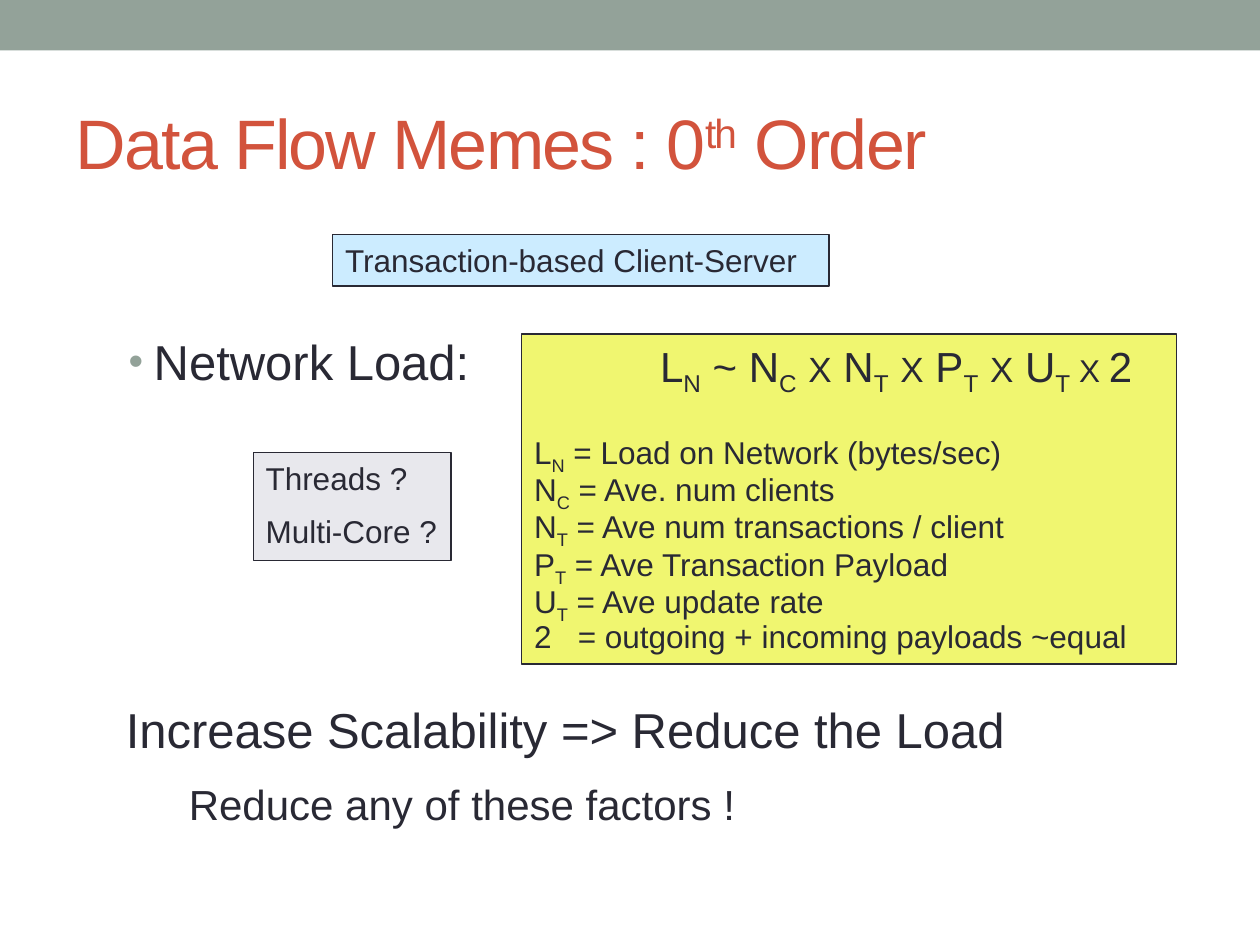
"""Build a slide on the network load of transaction-based client-server systems."""
from dataclasses import dataclass

from lxml import etree
from pptx import Presentation
from pptx.dml.color import RGBColor
from pptx.enum.shapes import MSO_SHAPE
from pptx.enum.text import MSO_ANCHOR, PP_ALIGN
from pptx.oxml.ns import qn
from pptx.util import Inches, Pt

RECT = MSO_SHAPE.RECTANGLE
TOP, MIDDLE = MSO_ANCHOR.TOP, MSO_ANCHOR.MIDDLE
LEFT = PP_ALIGN.LEFT
COLUMNS, ROWS = 100, 75
SUB, SUPER = -25, 30


@dataclass(frozen=True)
class Theme:
    """Colours, font and type sizes of the slide."""
    font: str = "Arial"
    ink: str = "292934"
    accent: str = "D2533C"
    sage: str = "93A299"
    yellow: str = "F0F670"
    grey: str = "E8E8ED"
    blue: str = "CCECFF"
    title: int = 40
    lead: int = 28
    formula: int = 24
    times: int = 20
    note: int = 18


THEME = Theme()


def rgb(value):
    """Return a colour from its hex code."""
    return RGBColor.from_string(value)


def grid(prs, col, row, cols, rows):
    """Return left, top, width and height for a span of the slide grid."""
    w, h = prs.slide_width / COLUMNS, prs.slide_height / ROWS
    return int(col * w), int(row * h), int(cols * w), int(rows * h)


def place(sp, box):
    """Move a placeholder to a box."""
    sp.left, sp.top, sp.width, sp.height = box


def add_run(p, text, size, shift=0, color=THEME.ink, spacing=0):
    """Add one formatted run, raised or lowered by a percentage."""
    r = p.add_run()
    r.text = text
    r.font.name, r.font.size = THEME.font, Pt(size)
    r.font.color.rgb = rgb(color)
    if shift:
        r.font._element.set("baseline", str(shift * 1000))
    if spacing:
        r.font._element.set("spc", str(spacing * 100))


def add_paragraph(tf, runs, before=0, line=None, indent=0, hanging=0):
    """Fill the first empty paragraph or add one, from (text, size, shift) runs."""
    p = tf.paragraphs[0] if not tf.text else tf.add_paragraph()
    p.alignment, p.space_before = LEFT, Pt(before)
    if line:
        p.line_spacing = line
    pPr = p._p.get_or_add_pPr()
    pPr.set("marL", str(Inches(indent)))
    pPr.set("indent", str(-Inches(hanging)))
    for run in runs:
        add_run(p, *run)
    return p


def add_property(parent, tag, **attributes):
    """Append a drawing element with its attributes."""
    child = etree.SubElement(parent, qn(tag))
    for name, value in attributes.items():
        child.set(name, value)
    return child


def add_bullet(p):
    """Give a paragraph a sage dot."""
    pPr = p._p.get_or_add_pPr()
    add_property(add_property(pPr, "a:buClr"), "a:srgbClr", val=THEME.sage)
    add_property(pPr, "a:buSzPct", val="85000")
    add_property(pPr, "a:buFont", typeface=THEME.font)
    add_property(pPr, "a:buChar", char="•")


def add_box(s, box, fill, outlined=True):
    """Add a filled rectangle and return its text frame."""
    sp = s.shapes.add_shape(RECT, *box)
    sp.shadow.inherit = False
    sp.fill.solid()
    sp.fill.fore_color.rgb = rgb(fill)
    if outlined:
        sp.line.color.rgb = rgb(THEME.ink)
        sp.line.width = Pt(0.75)
    else:
        sp.line.fill.background()
    tf = sp.text_frame
    tf.word_wrap, tf.vertical_anchor = True, TOP
    return tf


def add_title(s, box):
    """Fill the title placeholder."""
    place(s.shapes.title, box)
    tf = s.shapes.title.text_frame
    tf.vertical_anchor = MIDDLE
    add_paragraph(tf, [(text, THEME.title, shift, THEME.accent, -1) for text, shift in
                       (("Data Flow Memes : 0", 0), ("th", SUPER), (" Order", 0))])


def add_topic(s, box):
    """Fill the body placeholder with the bulleted topic."""
    body = s.placeholders[1]
    place(body, box)
    runs = [("Network Load:", THEME.lead)]
    add_bullet(add_paragraph(body.text_frame, runs, indent=0.2, hanging=0.2))


def add_note_box(s, box, fill, lines):
    """Add a box of plain note lines."""
    tf = add_box(s, box, fill)
    for text in lines:
        add_paragraph(tf, [(text, THEME.note)], before=9)


def add_load_formula(s, box):
    """Add the load formula with the legend of its symbols."""
    tf = add_box(s, box, THEME.yellow)
    big, times, note = THEME.formula, THEME.times, THEME.note
    runs = [("L", big), ("N", big, SUB), (" ~ N", big)]
    for sub, factor in (("C", " N"), ("T", " P"), ("T", " U")):
        runs += [(sub, big, SUB), (" ", big), ("X", times), (factor, big)]
    runs += [("T", big, SUB), (" X ", note), ("2", big)]
    add_paragraph(tf, runs, indent=1)

    legend = (
        ("L", "N", "Load on Network (bytes/sec)"),
        ("N", "C", "Ave. num clients"),
        ("N", "T", "Ave num transactions / client"),
        ("P", "T", "Ave Transaction Payload"),
        ("U", "T", "Ave update rate"),
    )
    for i, (symbol, sub, meaning) in enumerate(legend):
        runs = [(symbol, note), (sub, note, SUB), (f" = {meaning}", note)]
        add_paragraph(tf, runs, before=9 if i else 28.5, line=0.5)
    runs = [("2", note), (" ", note, 0, THEME.ink, 10),
            ("= outgoing + incoming payloads ~equal", note)]
    add_paragraph(tf, runs, before=9, line=0.5)


def add_conclusion(s, box):
    """Add the closing statement and its indented follow-up."""
    tf = s.shapes.add_textbox(*box).text_frame
    tf.word_wrap = True
    add_paragraph(tf, [("Increase Scalability => Reduce the Load", THEME.lead)])
    add_paragraph(tf, [("Reduce any of these factors !", THEME.formula)],
                  before=12, indent=0.5)


def main():
    """Build and save the slide."""
    prs = Presentation()
    prs.slide_width, prs.slide_height = Inches(10), Inches(7.5)
    s = prs.slides.add_slide(prs.slide_layouts[1])
    add_box(s, grid(prs, 0, 0, COLUMNS, 4), THEME.sage, outlined=False)
    add_title(s, grid(prs, 5, 5.8, 90, 10.8))
    add_topic(s, grid(prs, 9.2, 25.8, 38.5, 26.6))
    add_load_formula(s, grid(prs, 41.4, 26.5, 52, 26.2))
    add_note_box(s, grid(prs, 20.1, 35.9, 15.7, 8.6), THEME.grey,
                 ("Threads ?", "Multi-Core ?"))
    add_conclusion(s, grid(prs, 9, 55, 81.9, 16.4))
    add_note_box(s, grid(prs, 26.4, 18.6, 39.4, 4.1), THEME.blue,
                 ("Transaction-based Client-Server",))
    prs.save("out.pptx")


if __name__ == "__main__":
    main()
